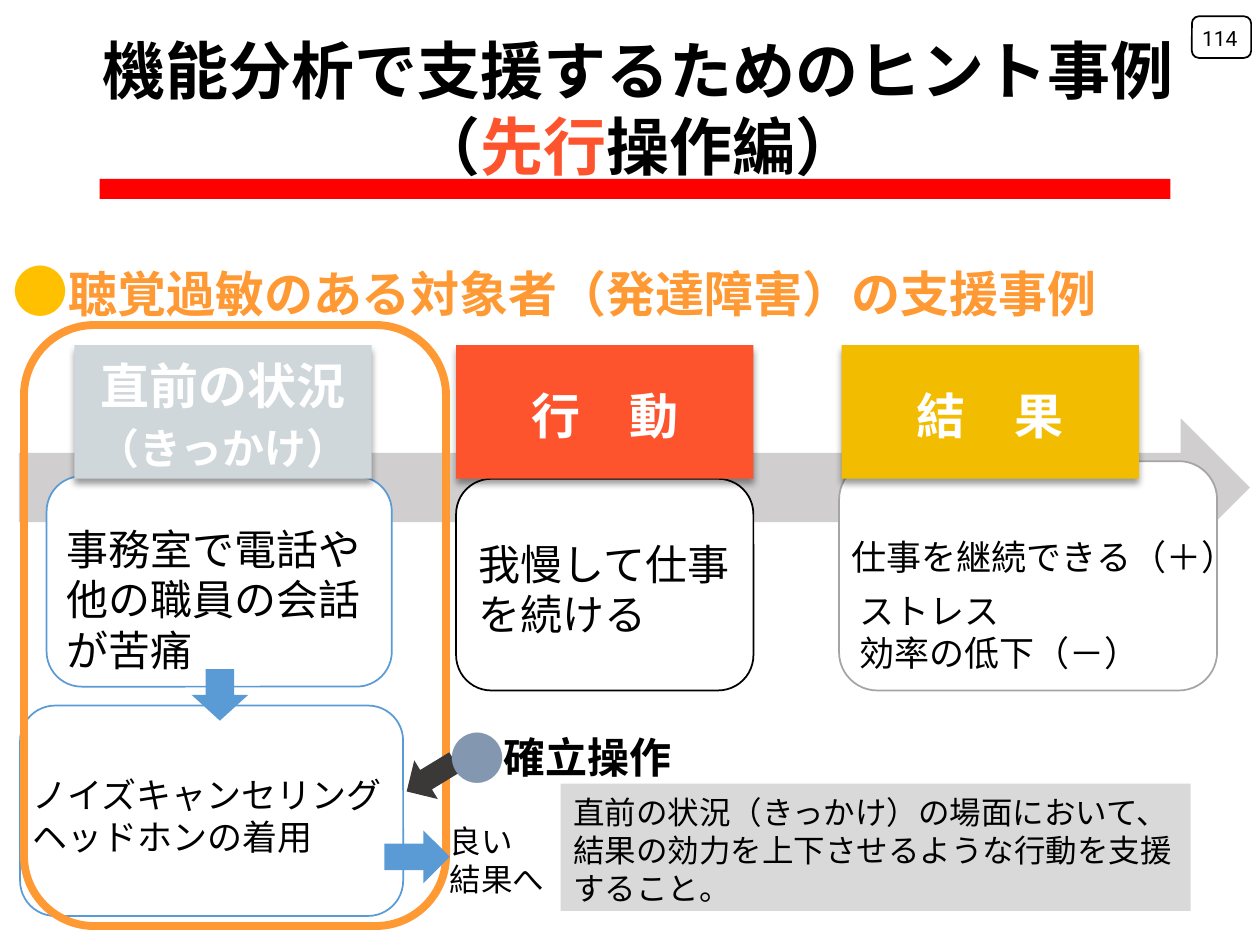
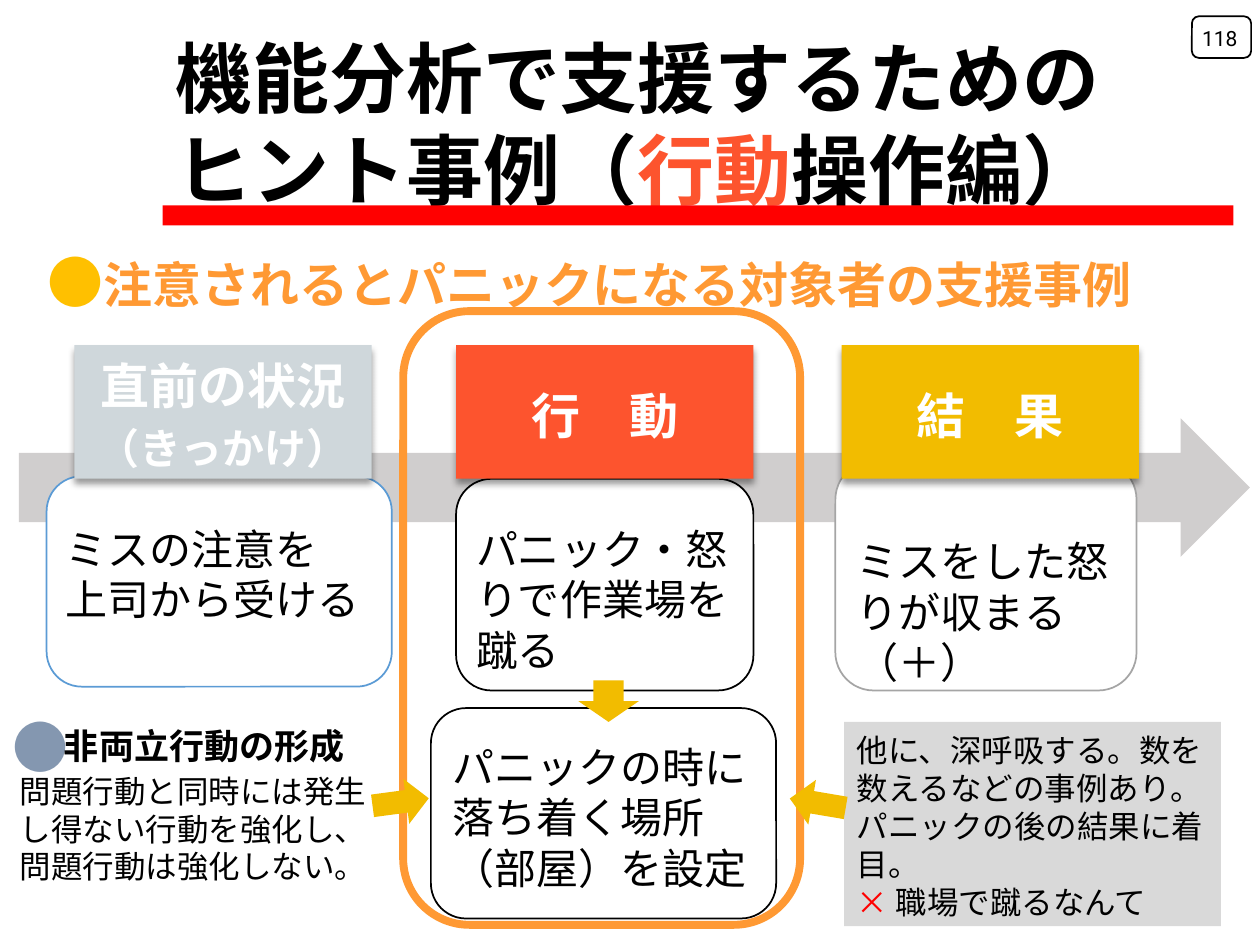
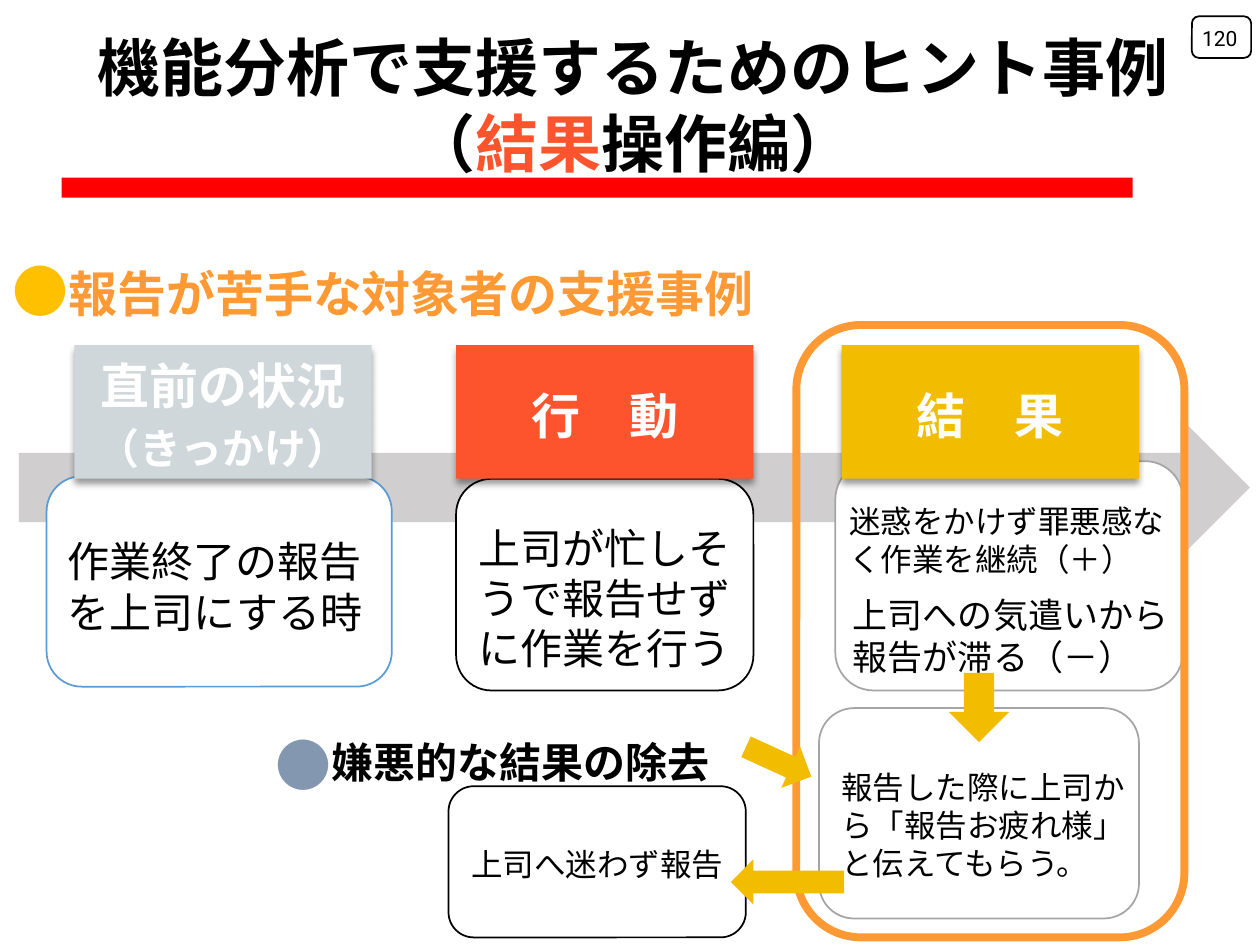
from lxml import etree
from pptx import Presentation
from pptx.dml.color import RGBColor
from pptx.enum.shapes import MSO_SHAPE
from pptx.enum.text import MSO_ANCHOR, MSO_AUTO_SIZE, PP_ALIGN
from pptx.oxml.ns import qn
from pptx.util import Inches, Pt

# Shared look
FONT = "Noto Sans CJK JP"
NUMBER_FONT = "Roboto"
LINE_PITCH = 1.2
BLACK = RGBColor(0x00, 0x00, 0x00)
WHITE = RGBColor(0xFF, 0xFF, 0xFF)
RED = RGBColor(0xFF, 0x00, 0x00)
VERMILION = RGBColor(0xFD, 0x54, 0x2E)
ORANGE = RGBColor(0xFF, 0x99, 0x33)
AMBER = RGBColor(0xFF, 0xC0, 0x00)
GOLD = RGBColor(0xF2, 0xBC, 0x00)
BLUE = RGBColor(0x5B, 0x9B, 0xD5)
SLATE = RGBColor(0x84, 0x97, 0xB0)
SILVER = RGBColor(0xCF, 0xD7, 0xDB)
BAND_GRAY = RGBColor(0xD0, 0xCE, 0xCE)
NOTE_GRAY = RGBColor(0xD9, 0xD9, 0xD9)
LINE_GRAY = RGBColor(0xA5, 0xA5, 0xA5)
CHARCOAL = RGBColor(0x3B, 0x38, 0x38)

# Stages of the flow: left edge, fill, heading runs
STAGES = [
    (0.59, SILVER, [("直前の状況\n", {}), ("（きっかけ）", {"size": 24})]),
    (3.62, VERMILION, ["行　動"]),
    (6.68, GOLD, ["結　果"]),
]


def add_run(p, text, size, color, bold, font):
    r = p.add_run()
    r.text = text.rstrip("\n")
    r.font.size = Pt(size)
    r.font.bold = bold
    r.font.color.rgb = color
    r.font.name = font
    etree.SubElement(r._r.get_or_add_rPr(), qn("a:ea")).set("typeface", font)
    if text.endswith("\n"):
        p.add_line_break()


def write(sp, paragraphs, size, color=BLACK, bold=False, font=FONT,
          align=PP_ALIGN.LEFT, anchor=MSO_ANCHOR.TOP, wrap=True):
    """Fill a shape; a paragraph is a string or a list of runs (text, changes)."""
    tf = sp.text_frame
    tf.word_wrap = wrap
    tf.auto_size = MSO_AUTO_SIZE.NONE
    tf.vertical_anchor = anchor
    tf.margin_left = tf.margin_right = Inches(0.1)
    tf.margin_top = tf.margin_bottom = Inches(0.05)
    if font == FONT:
        tf.margin_top += Pt(size * 0.1)
    for i, runs in enumerate(paragraphs):
        p = tf.add_paragraph() if i else tf.paragraphs[0]
        p.alignment = align
        if font == FONT:
            p.line_spacing = Pt(size * LINE_PITCH)
        for item in [runs] if isinstance(runs, str) else runs:
            text, changes = (item, {}) if isinstance(item, str) else item
            style = {"size": size, "color": color, "bold": bold, "font": font}
            add_run(p, text, **{**style, **changes})


def add_text(s, x, y, w, h, paragraphs, size, **style):
    sp = s.shapes.add_textbox(Inches(x), Inches(y), Inches(w), Inches(h))
    write(sp, paragraphs, size, **style)


def add_shape(s, kind, x, y, w, h, fill=None, line=None, line_width=1, rotation=0):
    sp = s.shapes.add_shape(kind, Inches(x), Inches(y), Inches(w), Inches(h))
    sp.shadow.inherit = False
    sp.rotation = rotation
    if fill is None:
        sp.fill.background()
    else:
        sp.fill.solid()
        sp.fill.fore_color.rgb = fill
    if line is None:
        sp.line.fill.background()
    else:
        sp.line.color.rgb = line
        sp.line.width = Pt(line_width)
    return sp


def add_card(s, x, y, w, h, line):
    return add_shape(s, MSO_SHAPE.ROUNDED_RECTANGLE, x, y, w, h, WHITE, line)


def add_frame(s, x, y, w, h):
    add_shape(s, MSO_SHAPE.ROUNDED_RECTANGLE, x, y, w, h, line=ORANGE, line_width=4.5)


def add_down_arrow(s, x, y, w, h, fill=GOLD, rotation=0):
    add_shape(s, MSO_SHAPE.DOWN_ARROW, x, y, w, h, fill, rotation=rotation)


def add_note(s, x, y, w, h, paragraphs):
    write(add_shape(s, MSO_SHAPE.RECTANGLE, x, y, w, h, NOTE_GRAY), paragraphs, 18)


def add_dot(s, x, y):
    add_text(s, x, y, 0.65, 0.64, ["●"], 32, color=SLATE, wrap=False)


def add_drop_shadow(sp):
    effects = sp._element.spPr.find(qn("a:effectLst"))
    shadow = etree.SubElement(effects, qn("a:outerShdw"), blurRad=str(Pt(4)),
                              dist=str(Pt(3)), dir="5400000", rotWithShape="0")
    black = etree.SubElement(shadow, qn("a:srgbClr"), val="000000")
    etree.SubElement(black, qn("a:alpha"), val="40000")


def add_title(s, x, y, w, h, paragraphs, size, align, rule_x, rule_y):
    title = s.shapes.title
    title.left, title.top = Inches(x), Inches(y)
    title.width, title.height = Inches(w), Inches(h)
    write(title, paragraphs, size, bold=True, align=align)
    add_shape(s, MSO_SHAPE.RECTANGLE, rule_x, rule_y, 8.5, 0.16, RED)


def add_subject(s, x, y, text):
    runs = [("●", {"color": AMBER, "bold": False, "size": 32}), (text, {"size": 28})]
    add_text(s, x, y, 9.64, 0.64, [runs], 32, color=ORANGE, bold=True)


def add_flow(s, result_x, result_w, texts):
    """Grey arrow, three cards with their texts, three headings."""
    add_shape(s, MSO_SHAPE.RIGHT_ARROW, 0.15, 3.32, 9.77, 1.1, BAND_GRAY)
    add_card(s, 0.37, 3.78, 2.74, 1.67, BLUE)
    add_card(s, 3.62, 3.8, 2.36, 1.68, BLACK)
    add_card(s, result_x, 3.66, result_w, 1.82, LINE_GRAY)
    for x, y, w, h, paragraphs, size in texts:
        add_text(s, x, y, w, h, paragraphs, size)
    for x, fill, heading in STAGES:
        sp = add_shape(s, MSO_SHAPE.RECTANGLE, x, 2.74, 2.36, 1.06, fill)
        add_drop_shadow(sp)
        write(sp, [heading], 28, color=WHITE, bold=True,
              align=PP_ALIGN.CENTER, anchor=MSO_ANCHOR.MIDDLE)


def add_page_number(s, number):
    add_card(s, 9.46, 0.13, 0.47, 0.33, BLACK)
    add_text(s, 9.35, 0.1, 0.57, 0.4, [number], 12, font=NUMBER_FONT,
             align=PP_ALIGN.RIGHT, anchor=MSO_ANCHOR.MIDDLE)


def build_antecedent(s):
    add_title(s, 0.43, 0.15, 9.26, 1.31,
              [["機能分析で支援するためのヒント事例（",
                ("先行", {"color": VERMILION}), "操作編）"]],
              36, PP_ALIGN.CENTER, 0.79, 1.42)
    add_flow(s, 6.66, 3, [
        (0.43, 4.07, 2.74, 1.31, ["事務室で電話や", "他の職員の会話が苦痛"], 24),
        (3.7, 4.19, 2.24, 0.91, ["我慢して仕事を続ける"], 24),
        (6.66, 4.17, 3.44, 0.44, ["仕事を継続できる（＋）"], 20),
        (6.72, 4.6, 2.6, 0.77, ["ストレス", "効率の低下（－）"], 20),
    ])
    add_subject(s, 0, 1.94, "聴覚過敏のある対象者（発達障害）の支援事例")
    # Changed antecedent
    add_card(s, 0.16, 5.6, 3.04, 1.67, BLUE)
    add_text(s, 0.16, 6.06, 3, 0.77, ["ノイズキャンセリングヘッドホンの着用"], 20)
    add_frame(s, 0.19, 2.58, 3.35, 4.77)
    add_down_arrow(s, 1.52, 5.31, 0.45, 0.41, BLUE)
    # Establishing operation
    add_text(s, 3.9, 5.72, 5.9, 0.5, ["確立操作"], 24, bold=True)
    add_note(s, 4.45, 6.22, 5, 1.01,
             ["直前の状況（きっかけ）の場面において、結果の効力を上下させるような行動を支援すること。"])
    add_down_arrow(s, 3.24, 5.94, 0.36, 0.45, CHARCOAL, 58.7)
    add_dot(s, 3.47, 5.65)
    add_shape(s, MSO_SHAPE.RIGHT_ARROW, 3.05, 6.59, 0.52, 0.42, BLUE)
    add_text(s, 3.47, 6.45, 1.06, 0.71, ["良い", "結果へ"], 18)


def build_behavior(s):
    add_title(s, 1.29, 0.13, 8.39, 1.58,
              ["機能分析で支援するための",
               ["ヒント事例（", ("行動", {"color": VERMILION}), "操作編）"]],
              44, PP_ALIGN.LEFT, 1.29, 1.63)
    add_flow(s, 6.63, 2.39, [
        (0.42, 4.07, 2.74, 0.91, ["ミスの注意を", "上司から受ける"], 24),
        (3.68, 4.07, 2.24, 1.31, ["パニック・怒りで作業場を蹴る"], 24),
        (6.7, 4.17, 2.26, 1.31, ["ミスをした怒りが収まる（＋）"], 24),
    ])
    add_subject(s, 0.28, 1.87, "注意されるとパニックになる対象者の支援事例")
    # Replacement behavior
    add_card(s, 3.42, 5.62, 2.74, 1.67, BLACK)
    add_text(s, 3.49, 5.8, 3, 1.31, ["パニックの時に", "落ち着く場所", "（部屋）を設定"], 24)
    add_note(s, 6.7, 5.73, 2.99, 1.62,
             ["他に、深呼吸する。数を数えるなどの事例あり。", "パニックの後の結果に着目。",
              [("×", {"color": RED}), "職場で蹴るなんて"]])
    add_frame(s, 3.2, 2.47, 3.15, 4.87)
    # Incompatible behavior
    add_dot(s, 0, 5.56)
    add_text(s, 0.41, 5.67, 2.53, 0.44, ["非両立行動の形成"], 20, bold=True)
    add_down_arrow(s, 4.59, 5.4, 0.48, 0.33)
    add_down_arrow(s, 3, 6.14, 0.36, 0.45, rotation=262.4)
    add_down_arrow(s, 6.31, 6.15, 0.36, 0.45, rotation=99.6)
    add_text(s, 0.06, 6.05, 2.99, 1.01,
             ["問題行動と同時には発生し得ない行動を強化し、問題行動は強化しない。"], 18)


def build_consequence(s):
    add_title(s, 0.37, 0.13, 9.31, 1.31,
              [["機能分析で支援するためのヒント事例（",
                ("結果", {"color": VERMILION}), "操作編）"]],
              36, PP_ALIGN.CENTER, 0.49, 1.41)
    add_flow(s, 6.63, 2.76, [
        (0.44, 4.17, 2.74, 0.91, ["作業終了の報告", "を上司にする時"], 24),
        (3.7, 4.06, 2.24, 1.31, ["上司が忙しそうで報告せずに作業を行う"], 24),
        (6.64, 3.91, 2.85, 0.71, ["迷惑をかけず罪悪感なく作業を継続（＋）"], 18),
        (6.67, 4.63, 2.85, 0.77, ["上司への気遣いから報告が滞る（－）"], 20),
    ])
    add_subject(s, 0, 1.94, "報告が苦手な対象者の支援事例")
    # Changed consequence
    add_card(s, 6.5, 5.62, 2.54, 1.67, LINE_GRAY)
    add_frame(s, 6.32, 2.58, 3.08, 4.86)
    add_down_arrow(s, 7.53, 5.34, 0.48, 0.55)
    add_text(s, 6.58, 6.02, 2.56, 1.01,
             ["報告した際に上司から「報告お疲れ様」と伝えてもらう。"], 18)
    # Removal of the aversive consequence
    add_dot(s, 2.09, 5.7)
    add_text(s, 2.53, 5.76, 3.22, 0.5, ["嫌悪的な結果の除去"], 24, bold=True)
    add_down_arrow(s, 6, 5.76, 0.36, 0.57, rotation=294.6)
    write(add_card(s, 3.56, 6.24, 2.36, 1.2, BLACK), ["上司へ迷わず報告"], 18,
          align=PP_ALIGN.CENTER, anchor=MSO_ANCHOR.MIDDLE)
    add_down_arrow(s, 6.07, 6.55, 0.36, 0.9, rotation=90)


def main():
    prs = Presentation()
    prs.slide_width, prs.slide_height = Inches(10), Inches(7.5)
    pages = [("114", build_antecedent), ("118", build_behavior),
             ("120", build_consequence)]
    for number, build in pages:
        s = prs.slides.add_slide(prs.slide_layouts[5])
        build(s)
        add_page_number(s, number)
    prs.save("out.pptx")


if __name__ == "__main__":
    main()
